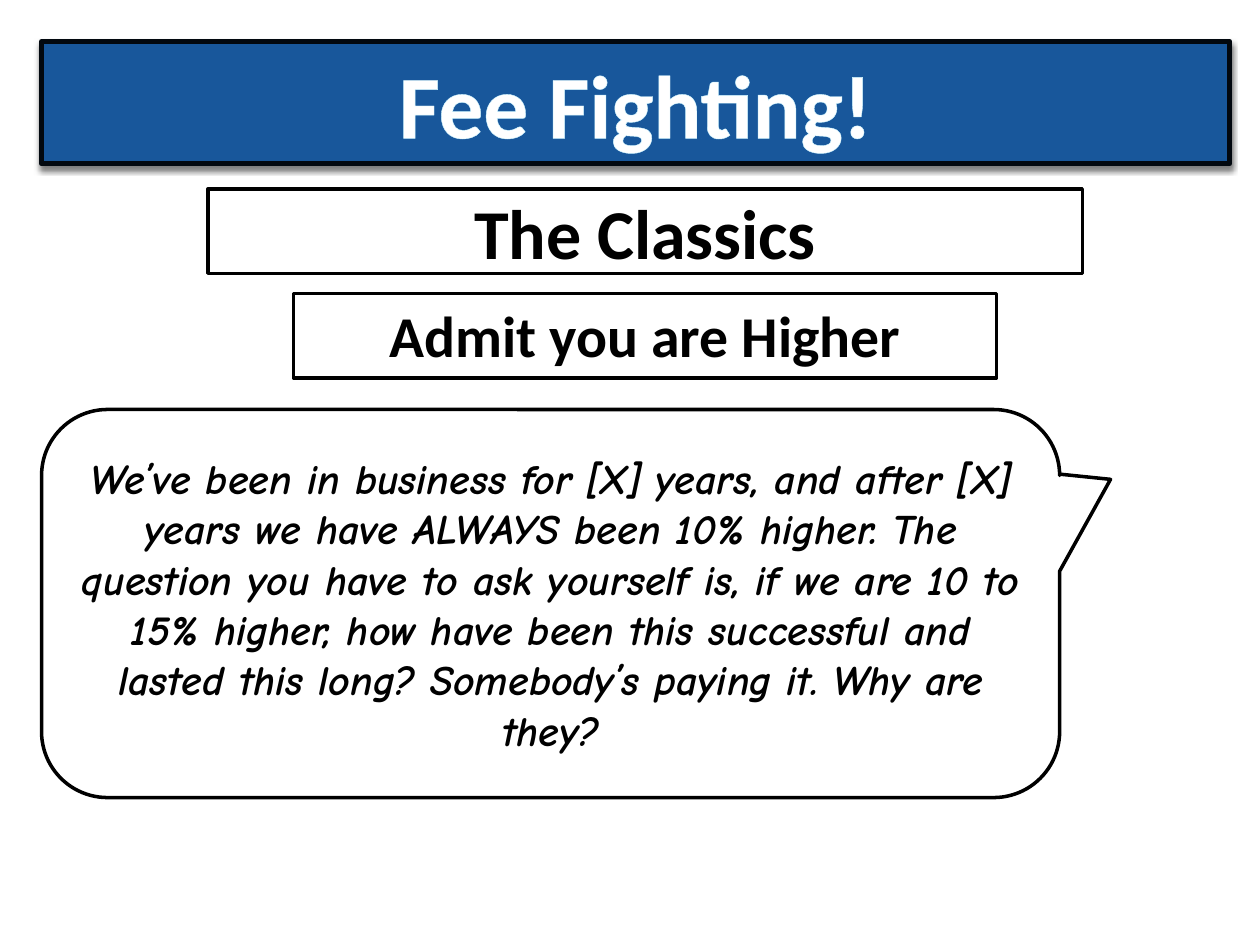
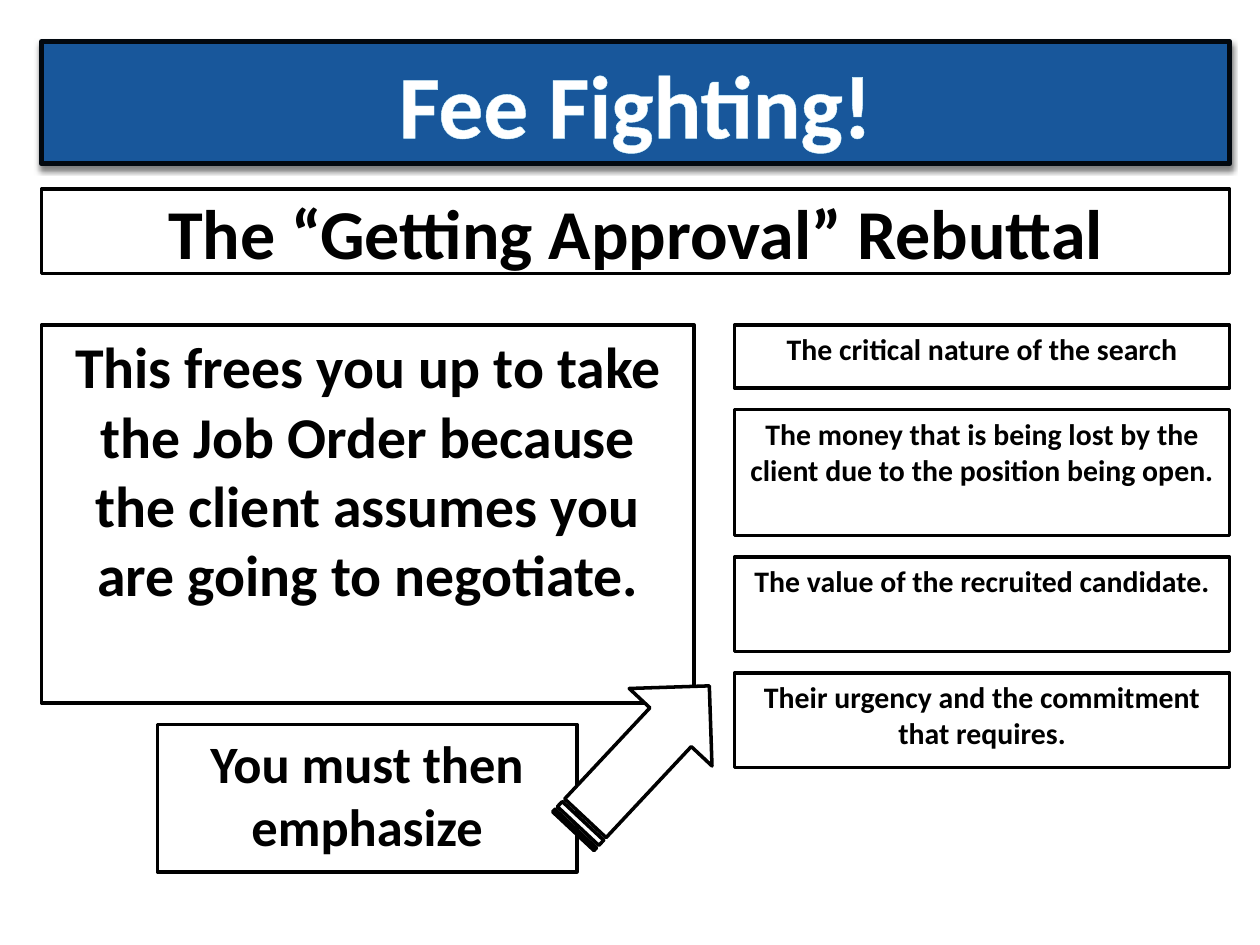
from lxml.etree import SubElement
from pptx import Presentation
from pptx.dml.color import RGBColor
from pptx.enum.shapes import MSO_SHAPE
from pptx.enum.text import MSO_ANCHOR, MSO_AUTO_SIZE, PP_ALIGN
from pptx.oxml import parse_xml
from pptx.oxml.ns import nsdecls, qn
from pptx.util import Inches, Pt

# Content
TITLE = "Fee Fighting!"
CLASSICS = "The Classics"
ADMIT = "Admit you are Higher"
SPEECH = (
    "We’ve been in business for [X] years, and after [X] years we have ALWAYS "
    "been 10% higher. The question you have to ask yourself is, if we are 10 to "
    "15% higher, how have been this successful and lasted this long? "
    "Somebody’s paying it. Why are they?"
)
REBUTTAL = "The “Getting Approval” Rebuttal"
BENEFIT = (
    "This frees you up to take the Job Order because the client assumes "
    "you are going to negotiate."
)
EMPHASIZE = "You must then emphasize"
POINTS = [  # text, box height
    ("The critical nature of the search", 0.5),
    ("The money that is being lost by the client due to the position being open.", 1),
    ("The value of the recruited candidate.", 0.75),
    ("Their urgency and the commitment that requires.", 0.75),
]

# Shared style
WHITE = RGBColor(0xFF, 0xFF, 0xFF)
BLACK = RGBColor(0, 0, 0)
BLUE = RGBColor(0x18, 0x57, 0x9B)
NAVY = RGBColor(0x02, 0x08, 0x0F)
PALE_BLUE = RGBColor(0xCC, 0xF2, 0xFD)
BODY_FONT, SPEECH_FONT = "Calibri", "Comic Neue"
LEFT, WIDTH = 0.33, 9.43
BAND_TOP, BAND_HEIGHT = 1.5, 0.67
BODY_TOP, GAP = 2.58, 0.17
POINT_LEFT, POINT_WIDTH = 5.83, 3.93


def paint(shape, fill, line, weight):
    shape.fill.solid()
    shape.fill.fore_color.rgb = fill
    shape.line.color.rgb = line
    shape.line.width = Pt(weight)


def write(shape, text, size, color=BLACK, font=BODY_FONT, italic=None,
          anchor=MSO_ANCHOR.TOP):
    frame = shape.text_frame
    frame.text = text
    frame.word_wrap = True
    frame.auto_size = MSO_AUTO_SIZE.NONE
    frame.vertical_anchor = anchor
    para = frame.paragraphs[0]
    para.alignment = PP_ALIGN.CENTER
    span = para.runs[0]
    span.font.name = font
    span.font.size = Pt(size)
    span.font.bold = True
    span.font.italic = italic
    span.font.color.rgb = color
    return span


def add_panel(page, place, kind=MSO_SHAPE.RECTANGLE):
    panel = page.shapes.add_shape(kind, *map(Inches, place))
    panel.shadow.inherit = False
    paint(panel, WHITE, BLACK, 2)
    return panel


def add_box(page, place, text, size, **style):
    write(add_panel(page, place), text, size, **style)


def add_page(deck):
    page = deck.slides.add_slide(deck.slide_layouts[5])
    title = page.shapes.title
    title.left, title.top = Inches(LEFT), Inches(0.33)
    title.width, title.height = Inches(WIDTH), Inches(0.97)
    paint(title, BLUE, NAVY, 3)
    span = write(title, TITLE, 51, color=WHITE, anchor=MSO_ANCHOR.MIDDLE)

    # Thin pale outline around the letters
    outline = parse_xml(f'<a:ln {nsdecls("a")} w="{Pt(1)}"/>')
    fill = SubElement(outline, qn("a:solidFill"))
    SubElement(fill, qn("a:srgbClr"), val=str(PALE_BLUE))
    span.font._element.insert(0, outline)

    # Soft shadow below the band
    title._element.spPr.append(parse_xml(
        f'<a:effectLst {nsdecls("a")}><a:outerShdw blurRad="{Pt(3)}" '
        f'dist="{Pt(2)}" dir="5400000" rotWithShape="0">'
        '<a:srgbClr val="000000"><a:alpha val="50000"/></a:srgbClr>'
        '</a:outerShdw></a:effectLst>'))
    return page


def add_classics(deck):
    page = add_page(deck)
    add_box(page, (1.65, BAND_TOP, 6.94, BAND_HEIGHT), CLASSICS, 40,
            anchor=MSO_ANCHOR.MIDDLE)
    add_box(page, (2.33, 2.33, 5.58, BAND_HEIGHT), ADMIT, 33)

    # Speech bubble
    bubble = add_panel(page, (LEFT, 3.25, 8.08, 3.08),
                       MSO_SHAPE.ROUNDED_RECTANGULAR_CALLOUT)
    for index, value in enumerate((0.55, -0.32, 0.17)):
        bubble.adjustments[index] = value
    write(bubble, SPEECH, 24, font=SPEECH_FONT, italic=True,
          anchor=MSO_ANCHOR.MIDDLE)


def add_rebuttal(deck):
    page = add_page(deck)
    add_box(page, (LEFT, BAND_TOP, WIDTH, BAND_HEIGHT), REBUTTAL, 40,
            anchor=MSO_ANCHOR.MIDDLE)
    add_box(page, (LEFT, BODY_TOP, 5.18, 3), BENEFIT, 33)
    add_box(page, (1.25, 5.75, 3.33, 1.17), EMPHASIZE, 30)

    # Column of points
    top = BODY_TOP
    for text, height in POINTS:
        add_box(page, (POINT_LEFT, top, POINT_WIDTH, height), text, 17)
        top += height + GAP

    # Arrow from the prompt to the points
    arrow = add_panel(page, (4.3, 5.57, 1.58, 0.9), MSO_SHAPE.STRIPED_RIGHT_ARROW)
    arrow.rotation = 313.1


def main():
    deck = Presentation()
    deck.slide_width, deck.slide_height = Inches(10), Inches(7.5)
    add_classics(deck)
    add_rebuttal(deck)
    deck.save("out.pptx")


if __name__ == "__main__":
    main()
